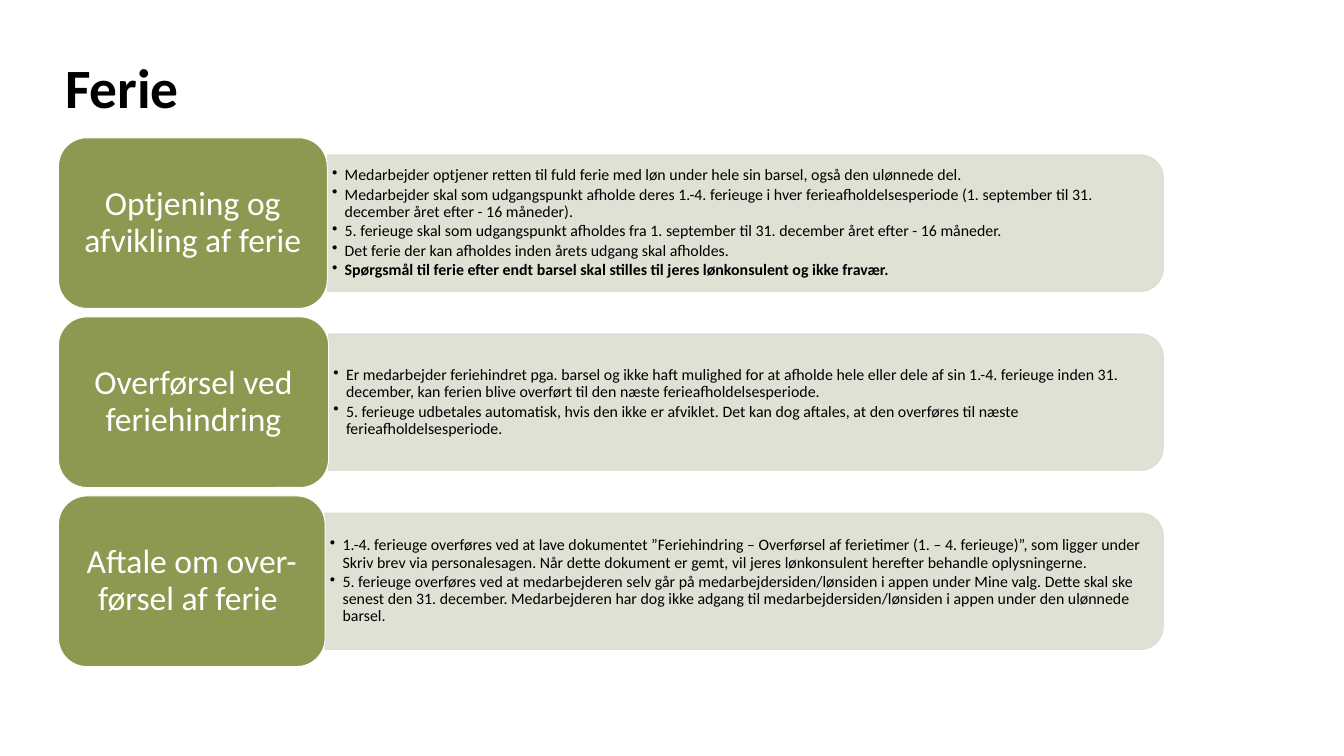
"""Build the slide on holiday rules during parental leave."""
from lxml.etree import SubElement
from pptx import Presentation
from pptx.dml.color import RGBColor
from pptx.enum.shapes import MSO_SHAPE as Preset
from pptx.enum.text import MSO_ANCHOR as Anchor, PP_ALIGN as Align
from pptx.oxml.ns import qn
from pptx.util import Cm, Pt

BLACK = RGBColor(0x00, 0x00, 0x00)
WHITE = RGBColor(0xFF, 0xFF, 0xFF)
OLIVE = RGBColor(0x8D, 0x99, 0x50)
SAGE = RGBColor(0xDB, 0xDE, 0xD0)

LEFT, TOP, PITCH = 2.21, 5.21, 6.77
LABEL_HEIGHT, PANEL_HEIGHT, PANEL_RIGHT = 6.45, 5.16, 43.97

TOPICS = [
    ("Optjening og afvikling af ferie", 10.16, [
        "Medarbejder optjener retten til fuld ferie med løn under hele sin barsel, også den ulønnede del.",
        "Medarbejder skal som udgangspunkt afholde deres 1.-4. ferieuge i hver ferieafholdelsesperiode "
        "(1. september til 31. december året efter - 16 måneder).",
        "5. ferieuge skal som udgangspunkt afholdes fra 1. september til 31. december året efter - 16 måneder.",
        "Det ferie der kan afholdes inden årets udgang skal afholdes.",
        "Spørgsmål til ferie efter endt barsel skal stilles til jeres lønkonsulent og ikke fravær."]),
    ("Overførsel ved feriehindring", 10.21, [
        "Er medarbejder feriehindret pga. barsel og ikke haft mulighed for at afholde hele eller dele af sin "
        "1.-4. ferieuge inden 31. december, kan ferien blive overført til den næste ferieafholdelsesperiode.",
        "5. ferieuge udbetales automatisk, hvis den ikke er afviklet. Det kan dog aftales, at den overføres "
        "til næste ferieafholdelsesperiode."]),
    ("Aftale om over-\vførsel af ferie ", 10.08, [
        "1.-4. ferieuge overføres ved at lave dokumentet ”Feriehindring – Overførsel af ferietimer "
        "(1. – 4. ferieuge)”, som ligger under Skriv brev via personalesagen. Når dette dokument er gemt, "
        "vil jeres lønkonsulent herefter behandle oplysningerne.",
        "5. ferieuge overføres ved at medarbejderen selv går på medarbejdersiden/lønsiden i appen under Mine valg. "
        "Dette skal ske senest den 31. december. Medarbejderen har dog ikke adgang til "
        "medarbejdersiden/lønsiden i appen under den ulønnede barsel."]),
]
EMPHASISED = TOPICS[0][2][-1]


class HolidaySlide:
    """Hold the text style and the slide, and draw its elements."""

    font_name = "Calibri"
    line_spacing = 0.9

    def __init__(self, slide):
        self.slide = slide

    def frame(self, shape, inset_x, inset_y):
        frame = shape.text_frame
        settings = {
            "word_wrap": True, "vertical_anchor": Anchor.MIDDLE,
            "margin_left": Cm(inset_x), "margin_right": Cm(inset_x),
            "margin_top": Cm(inset_y), "margin_bottom": Cm(inset_y),
        }
        for name, value in settings.items():
            setattr(frame, name, value)
        return frame

    def style(self, paragraph, size, color, bold=False, align=Align.LEFT):
        paragraph.alignment = align
        paragraph.line_spacing = self.line_spacing
        font = paragraph.font
        for name, value in {"name": self.font_name, "size": Pt(size), "bold": bold}.items():
            setattr(font, name, value)
        font.color.rgb = color

    def block(self, preset, left, top, width, height, fill, line):
        shape = self.slide.shapes.add_shape(preset, Cm(left), Cm(top), Cm(width), Cm(height))
        shape.shadow.inherit = False
        shape.fill.solid()
        shape.fill.fore_color.rgb = fill
        shape.line.color.rgb = line
        shape.line.width = Pt(1)
        return shape

    def title(self, text):
        box = self.slide.shapes.add_textbox(Cm(LEFT), Cm(LEFT), Cm(38.53), Cm(2.46))
        heading = self.frame(box, 0.25, 0.13).paragraphs[0]
        heading.text = text
        self.style(heading, 59.4, BLACK, bold=True)

    def panel(self, left, middle):
        width = PANEL_RIGHT - left
        panel = self.block(Preset.ROUND_2_SAME_RECTANGLE, left + (width - PANEL_HEIGHT) / 2,
                           middle - width / 2, PANEL_HEIGHT, width, SAGE, SAGE)
        panel.rotation = 90
        for color in panel._element.spPr.iter(qn("a:srgbClr")):
            SubElement(color, qn("a:alpha"), val="90000")

    def details(self, left, middle, rules):
        height = PANEL_HEIGHT - 0.5
        box = self.slide.shapes.add_textbox(
            Cm(left), Cm(middle - height / 2), Cm(PANEL_RIGHT - left - 0.25), Cm(height))
        frame = self.frame(box, 0.18, 0.1)
        for index, rule in enumerate(rules):
            paragraph = frame.add_paragraph() if index else frame.paragraphs[0]
            paragraph.text = rule
            paragraph.space_after = Pt(2.5)
            properties = paragraph._p.get_or_add_pPr()
            properties.set("marL", str(Cm(0.48)))
            properties.set("indent", str(-Cm(0.48)))
            SubElement(properties, qn("a:buChar"), char="•")
            self.style(paragraph, 17, BLACK, bold=rule == EMPHASISED)

    def label(self, top, width, text):
        label = self.block(Preset.ROUNDED_RECTANGLE, LEFT, top, width, LABEL_HEIGHT, OLIVE, WHITE)
        caption = self.frame(label, 0.38, 0.18).paragraphs[0]
        caption.text = text
        self.style(caption, 36, WHITE, align=Align.CENTER)

    def topic(self, top, name, label_width, rules):
        left, middle = LEFT + label_width, top + LABEL_HEIGHT / 2
        self.panel(left, middle)
        self.details(left, middle, rules)
        self.label(top, label_width, name)


def main():
    deck = Presentation()
    deck.slide_width, deck.slide_height = Cm(50.8), Cm(28.58)
    holiday = HolidaySlide(deck.slides.add_slide(deck.slide_layouts[6]))
    for row, (name, label_width, rules) in enumerate(TOPICS):
        holiday.topic(TOP + row * PITCH, name, label_width, rules)
    holiday.title("Ferie")
    deck.save("out.pptx")


if __name__ == "__main__":
    main()
